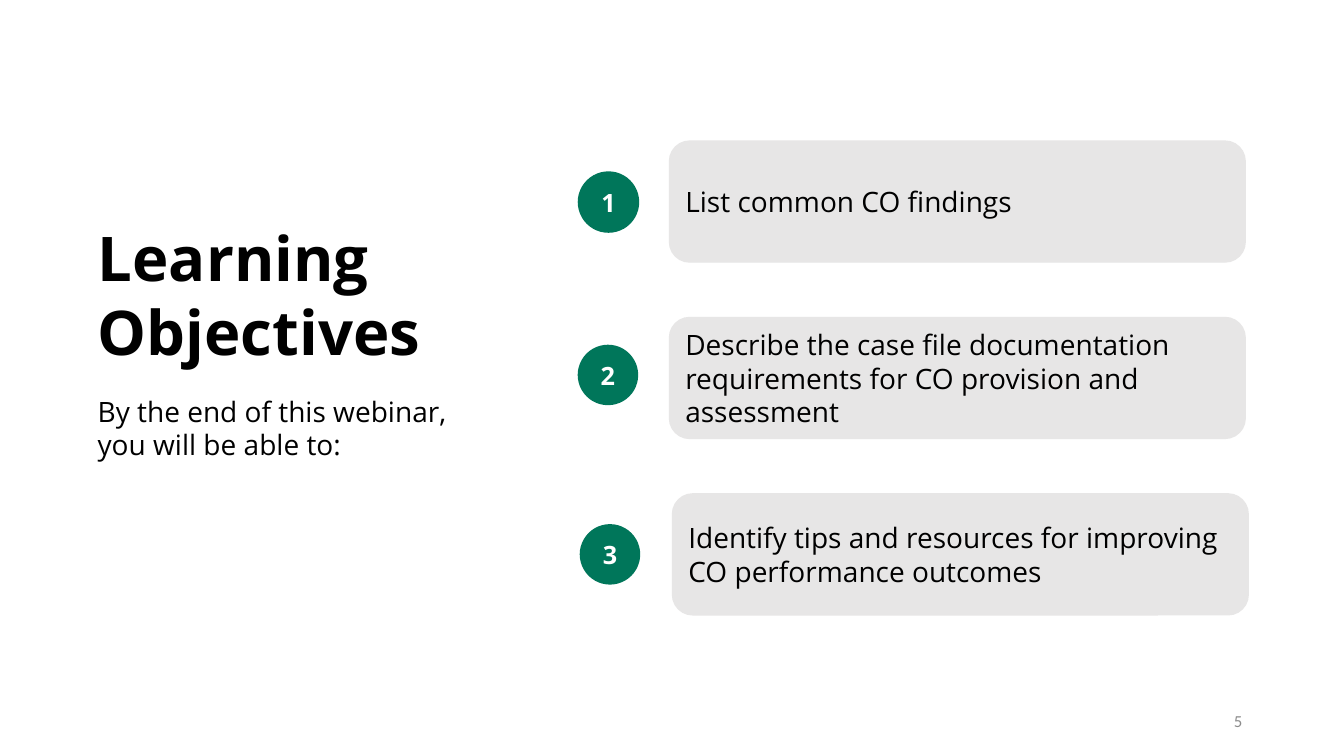
import pptx
import pptx.util
import pptx.dml.color
import pptx.enum.shapes
import pptx.enum.text

Inches = pptx.util.Inches
RGBColor = pptx.dml.color.RGBColor
SHAPE = pptx.enum.shapes.MSO_SHAPE
ALIGN = pptx.enum.text.PP_ALIGN
ANCHOR = pptx.enum.text.MSO_ANCHOR

GREEN = RGBColor(0x00, 0x76, 0x5A)
PALE_GRAY = RGBColor(0xE7, 0xE6, 0xE6)
GRAY = RGBColor(0x8C, 0x8C, 0x8C)
BLACK = RGBColor(0x00, 0x00, 0x00)
WHITE = RGBColor(0xFF, 0xFF, 0xFF)


def write(sp, lines, size, color=BLACK, bold=False, font="Open Sans",
          align=ALIGN.LEFT, anchor=ANCHOR.MIDDLE):
    tf = sp.text_frame
    tf.word_wrap = True
    tf.auto_size = pptx.enum.text.MSO_AUTO_SIZE.NONE
    tf.vertical_anchor = anchor
    tf.text = "\n".join(lines)
    for p in tf.paragraphs:
        p.alignment = align
        values = {"name": font, "size": pptx.util.Pt(size), "bold": bold}
        for name, value in values.items():
            setattr(p.runs[0].font, name, value)
        p.runs[0].font.color.rgb = color


def add_filled(kind, left, top, width, height, fill):
    sp = s.shapes.add_shape(kind, Inches(left), Inches(top), Inches(width), Inches(height))
    sp.shadow.inherit = False
    sp.fill.solid()
    sp.fill.fore_color.rgb = fill
    sp.line.color.rgb = fill
    sp.line.width = pptx.util.Pt(1)
    return sp


prs = pptx.Presentation()
prs.slide_width, prs.slide_height = Inches(13.33), Inches(7.5)
s = prs.slides.add_slide(prs.slide_layouts[5])

# Title
title = s.shapes.title
title.left, title.top = Inches(0.87), Inches(2.13)
title.width, title.height = Inches(3.87), Inches(1.58)
write(title, ["Learning", "Objectives"], 44, bold=True, anchor=ANCHOR.TOP)

# Introduction
intro = s.shapes.add_textbox(Inches(0.87), Inches(3.86), Inches(4.17), Inches(0.77))
write(intro, ["By the end of this webinar, you will be able to:"], 20, anchor=ANCHOR.TOP)

# Numbered objectives: circle left, top, size; box left; wording
objectives = [
    (5.73, 1.7, 0.61, 6.64, "List common CO findings"),
    (5.73, 3.42, 0.6, 6.64,
     "Describe the case file documentation requirements for CO provision and assessment"),
    (5.75, 5.2, 0.6, 6.67, "Identify tips and resources for improving CO performance outcomes"),
]
for i, (left, top, size, box_left, wording) in enumerate(objectives):
    circle = add_filled(SHAPE.OVAL, left, top, size, size, GREEN)
    circle.line.fill.background()
    write(circle, [str(i + 1)], 18, WHITE, bold=True, align=ALIGN.CENTER)
    box = add_filled(SHAPE.ROUNDED_RECTANGLE, box_left, 1.4 + 1.75 * i, 5.71, 1.2, PALE_GRAY)
    write(box, [wording], 20)

# Page number
number = s.shapes.add_textbox(Inches(9.42), Inches(6.95), Inches(3), Inches(0.4))
write(number, ["5"], 12, GRAY, font="Calibri", align=ALIGN.RIGHT)

prs.save("out.pptx")
